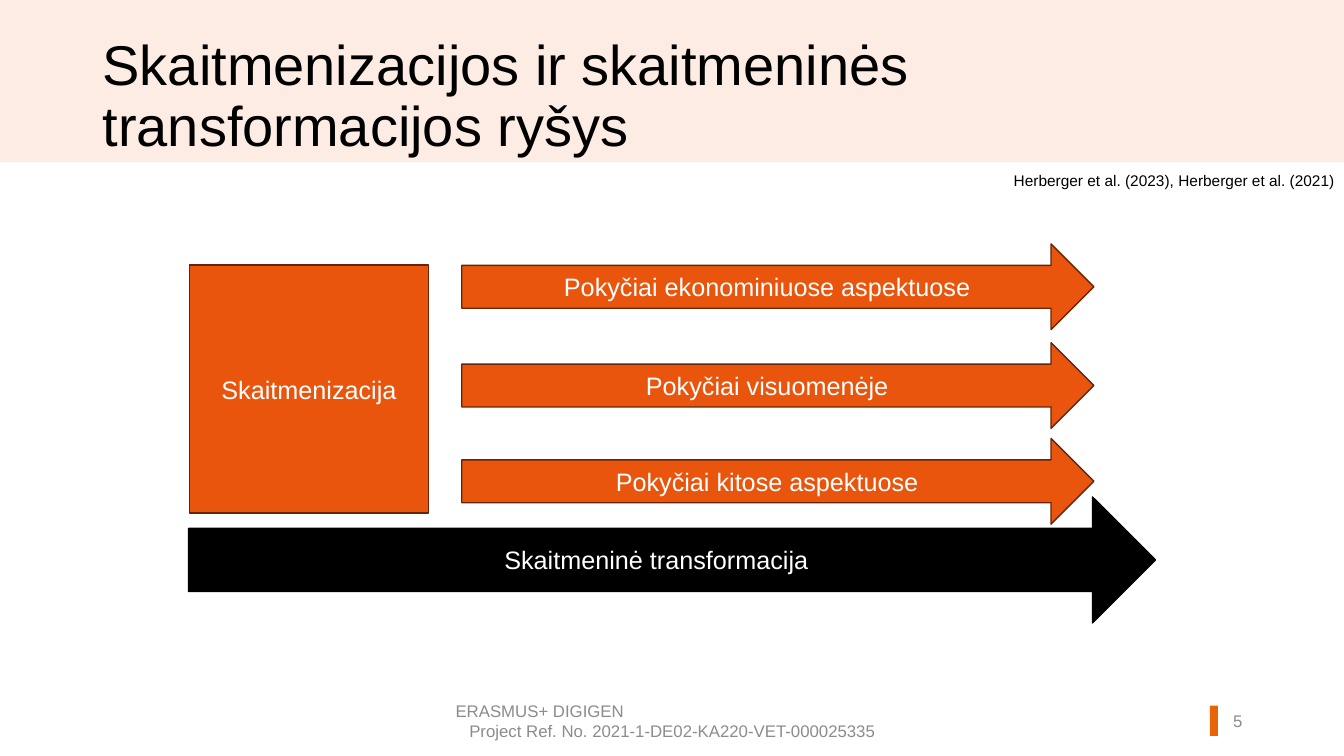
from pptx import Presentation
from pptx.dml.color import RGBColor
from pptx.enum.shapes import MSO_SHAPE as Shape
from pptx.enum.text import MSO_ANCHOR as Anchor, PP_ALIGN as Align
from pptx.util import Inches, Pt

COLORS = {
    "band": "FDECE3", "marker": "E86507", "grey": "8C8C8C",
    "orange": "E9550D", "brown": "662506", "black": "000000", "white": "FFFFFF",
}


def rgb(name):
    return RGBColor.from_string(COLORS[name])


def write(shape, lines, size, color, anchor=Anchor.TOP, spacing=None):
    """Fill a shape with (text, alignment) lines."""
    frame = shape.text_frame
    frame.word_wrap = True
    frame.vertical_anchor = anchor
    for index, (text, alignment) in enumerate(lines):
        paragraph = frame.add_paragraph() if index else frame.paragraphs[0]
        paragraph.text = text
        paragraph.alignment = alignment
        if spacing:
            paragraph.line_spacing = spacing
        for name, value in {"name": "Arial", "size": Pt(size)}.items():
            setattr(paragraph.font, name, value)
        paragraph.font.color.rgb = rgb(color)


def add_text(slide, box, lines, size, color, **layout):
    write(slide.shapes.add_textbox(*map(Inches, box)), lines, size, color, **layout)


def add_block(slide, kind, box, fill, line=None, label=None):
    shape = slide.shapes.add_shape(kind, *map(Inches, box))
    shape.shadow.inherit = False
    shape.fill.solid()
    shape.fill.fore_color.rgb = rgb(fill)
    if line:
        shape.line.color.rgb = rgb(line)
        shape.line.width = Pt(1)
    else:
        shape.line.fill.background()
    if label:
        write(shape, [(label, Align.CENTER)], 18, "white", Anchor.MIDDLE)


def add_header(slide, left, top, width, height):
    add_block(slide, Shape.RECTANGLE, (left, top, width, height), "band")
    add_text(slide, (left + 0.92, top + 0.32, 9.93, 1.21),
             [("Skaitmenizacijos ir skaitmeninės transformacijos ryšys", Align.LEFT)],
             40, "black", spacing=0.9)
    add_text(slide, (left + width - 3.45, top + height + 0.04, 3.46, 0.29),
             [("Herberger et al. (2023), Herberger et al. (2021)", Align.RIGHT)],
             11, "black")


def add_diagram(slide, left, top):
    add_block(slide, Shape.RECTANGLE, (left + 0.01, top + 0.21, 2.37, 2.46),
              "orange", "brown", "Skaitmenizacija")
    add_block(slide, Shape.RIGHT_ARROW, (left, top + 2.51, 9.59, 1.25),
              "black", "black", "Skaitmeninė transformacija")
    changes = [(0, "Pokyčiai ekonominiuose aspektuose"),
               (0.98, "Pokyčiai visuomenėje"),
               (1.93, "Pokyčiai kitose aspektuose")]
    for offset, label in changes:
        add_block(slide, Shape.RIGHT_ARROW, (left + 2.71, top + offset, 6.27, 0.85),
                  "orange", "brown", label)


def add_footer(slide, left, top, height):
    add_text(slide, (left, top, 4.5, height),
             [("ERASMUS+ DIGIGEN", Align.LEFT),
              ("Project Ref. No. 2021-1-DE02-KA220-VET-000025335", Align.CENTER)],
             12, "grey", anchor=Anchor.MIDDLE)
    add_block(slide, Shape.RECTANGLE, (left + 7.58, top + 0.05, 0.08, 0.3), "marker")
    add_text(slide, (left + 7.35, top, 0.65, height), [("5", Align.RIGHT)],
             12, "grey", anchor=Anchor.MIDDLE)


def main():
    presentation = Presentation()
    presentation.slide_width = Inches(13.33)
    presentation.slide_height = Inches(7.5)
    slide = presentation.slides.add_slide(presentation.slide_layouts[6])
    add_header(slide, 0, 0, 13.33, 1.61)
    add_diagram(slide, 1.87, 2.42)
    add_footer(slide, 4.42, 6.95, 0.4)
    presentation.save("out.pptx")


if __name__ == "__main__":
    main()
